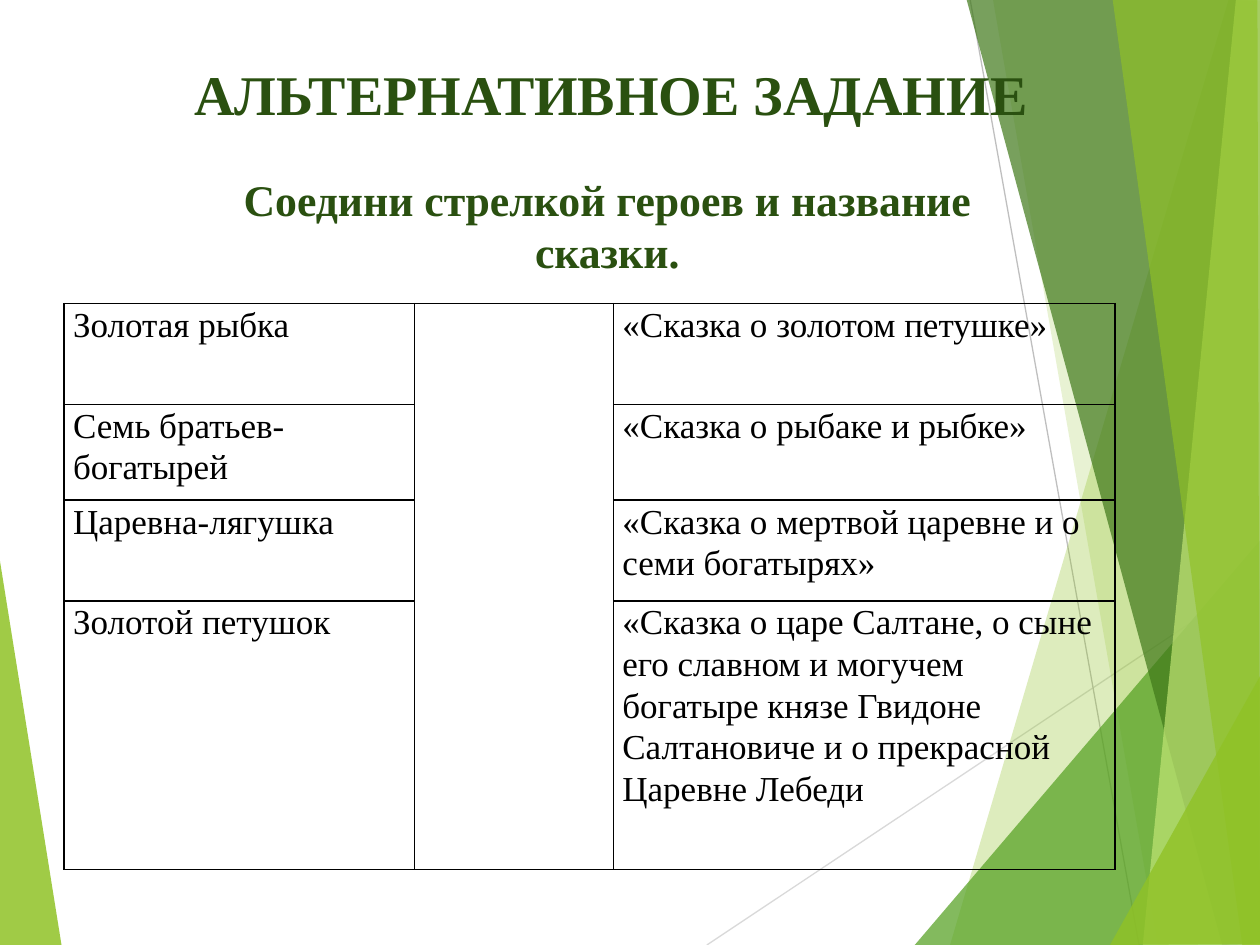
from dataclasses import dataclass

from lxml import etree
from pptx import Presentation
from pptx.dml.color import RGBColor
from pptx.enum.shapes import MSO_CONNECTOR
from pptx.enum.text import MSO_ANCHOR, PP_ALIGN
from pptx.oxml.ns import qn
from pptx.util import Inches, Pt

STRAIGHT = MSO_CONNECTOR.STRAIGHT
CENTER = PP_ALIGN.CENTER
TOP = MSO_ANCHOR.TOP
FONT = "Times New Roman"
DARK_GREEN = "2A5010"
BLACK = "000000"


@dataclass
class Facet:
    points: list[tuple[float, float]]
    color: str
    opacity: int


@dataclass
class Ray:
    start: tuple[float, float]
    end: tuple[float, float]
    color: str


LEFT_FACET = Facet([(-0.01, 4.39), (0.49, 7.51), (-0.01, 7.5)], "90C226", 85)
RAYS = [
    Ray((5.61, 7.5), (10.01, 4.57), "D9D9D9"),
    Ray((7.7, 0), (9.04, 7.5), "BFBFBF"),
]
RIGHT_FACETS = [
    Facet([(9.75, 0), (7.54, 7.5), (10.02, 7.51), (10.01, 0.01)], "90C226", 30),
    Facet([(7.88, -0.01), (9.19, 7.5), (10.01, 7.5), (10.01, -0.01)], "90C226", 20),
    Facet([(7.26, 7.5), (10, 4.29), (10.01, 7.5)], "54A021", 72),
    Facet([(7.67, -0.01), (9.7, 7.5), (10.01, 7.49), (10.01, -0.01)], "3F7819", 70),
    Facet([(9.81, -0.01), (9.07, 7.5), (10.01, 7.5), (10, -0.01)], "C0E474", 70),
    Facet([(8.83, -0.01), (9.86, 7.5), (10, 7.5), (9.98, -0.01)], "90C226", 65),
    Facet([(8.81, 7.5), (10.01, 5.35), (10.01, 7.49)], "90C226", 80),
]
COL_WIDTHS = [2.78, 1.58, 3.98]
ROW_HEIGHTS = [0.8, 0.76, 0.8, 2.13]
PAIRS = [
    ("Золотая рыбка", "«Сказка о золотом петушке»"),
    ("Семь братьев-богатырей", "«Сказка о рыбаке и рыбке»"),
    ("Царевна-лягушка", "«Сказка о мертвой царевне и о семи богатырях»"),
    (
        "Золотой петушок",
        "«Сказка о царе Салтане, о сыне его славном и могучем богатыре "
        "князе Гвидоне Салтановиче и о прекрасной Царевне Лебеди",
    ),
]


def rgb(color: str) -> RGBColor:
    return RGBColor.from_string(color)


def draw_facet(slide, facet: Facet) -> None:
    points = [(Inches(x), Inches(y)) for x, y in facet.points]
    builder = slide.shapes.build_freeform(*points[0])
    builder.add_line_segments(points[1:], close=True)
    sp = builder.convert_to_shape()
    sp.shadow.inherit = False
    sp.fill.solid()
    sp.fill.fore_color.rgb = rgb(facet.color)
    sp.line.fill.background()
    clr = sp._element.spPr.find(qn("a:solidFill"))[0]
    etree.SubElement(clr, qn("a:alpha"), val=str(facet.opacity * 1000))


def draw_ray(slide, ray: Ray) -> None:
    ends = [Inches(v) for v in (*ray.start, *ray.end)]
    line = slide.shapes.add_connector(STRAIGHT, *ends)
    line.line.color.rgb = rgb(ray.color)
    line.line.width = Pt(0.75)
    etree.SubElement(line._element.spPr, qn("a:effectLst"))


def add_run(p, text: str, size: float, color: str, bold: bool = False) -> None:
    r = p.add_run()
    r.text = text
    r.font.name = FONT
    r.font.size = Pt(size)
    r.font.bold = bold
    r.font.color.rgb = rgb(color)


def set_heading(sp, text: str, size: float, inset: float) -> None:
    tf = sp.text_frame
    tf.word_wrap = True
    tf.vertical_anchor = TOP
    tf.margin_top = Inches(inset)
    p = tf.paragraphs[0]
    p.alignment = CENTER
    add_run(p, text, size, DARK_GREEN, bold=True)


def style_cell(cell) -> None:
    tc_pr = cell._tc.get_or_add_tcPr()
    for side in ("lnL", "lnR", "lnT", "lnB"):
        ln = etree.SubElement(tc_pr, qn(f"a:{side}"), w=str(Pt(1)))
        fill = etree.SubElement(ln, qn("a:solidFill"))
        etree.SubElement(fill, qn("a:srgbClr"), val=BLACK)
    cell.fill.background()
    cell.margin_left = cell.margin_right = Inches(0.07)
    cell.margin_top = cell.margin_bottom = 0


def draw_table(slide) -> None:
    frame = slide.shapes.add_table(
        len(ROW_HEIGHTS), len(COL_WIDTHS), Inches(0.51), Inches(2.41),
        Inches(sum(COL_WIDTHS)), Inches(sum(ROW_HEIGHTS)),
    )
    table = frame.table
    table.first_row = False
    table.horz_banding = False
    for col, width in zip(table.columns, COL_WIDTHS):
        col.width = Inches(width)
    for row, height in zip(table.rows, ROW_HEIGHTS):
        row.height = Inches(height)
        for cell in row.cells:
            style_cell(cell)
    table.cell(0, 1).merge(table.cell(len(PAIRS) - 1, 1))
    for i, (hero, tale) in enumerate(PAIRS):
        for j, text in ((0, hero), (2, tale)):
            p = table.cell(i, j).text_frame.paragraphs[0]
            p.line_spacing = 1.07
            add_run(p, text, 20, BLACK)


def main() -> None:
    prs = Presentation()
    prs.slide_width = Inches(10)
    prs.slide_height = Inches(7.5)
    slide = prs.slides.add_slide(prs.slide_layouts[5])

    draw_facet(slide, LEFT_FACET)
    for ray in RAYS:
        draw_ray(slide, ray)
    for facet in RIGHT_FACETS:
        draw_facet(slide, facet)

    title = slide.shapes.title
    title.left, title.top = Inches(1.38), Inches(0.36)
    title.width, title.height = Inches(6.94), Inches(0.94)
    set_heading(title, "АЛЬТЕРНАТИВНОЕ ЗАДАНИЕ", 32, 0.11)
    slide.shapes._spTree.append(title._element)

    draw_table(slide)
    task = slide.shapes.add_textbox(Inches(1.35), Inches(1.29), Inches(6.94), Inches(1.44))
    set_heading(task, "Соедини стрелкой героев и название сказки.", 25, 0.08)

    prs.save("out.pptx")


if __name__ == "__main__":
    main()
